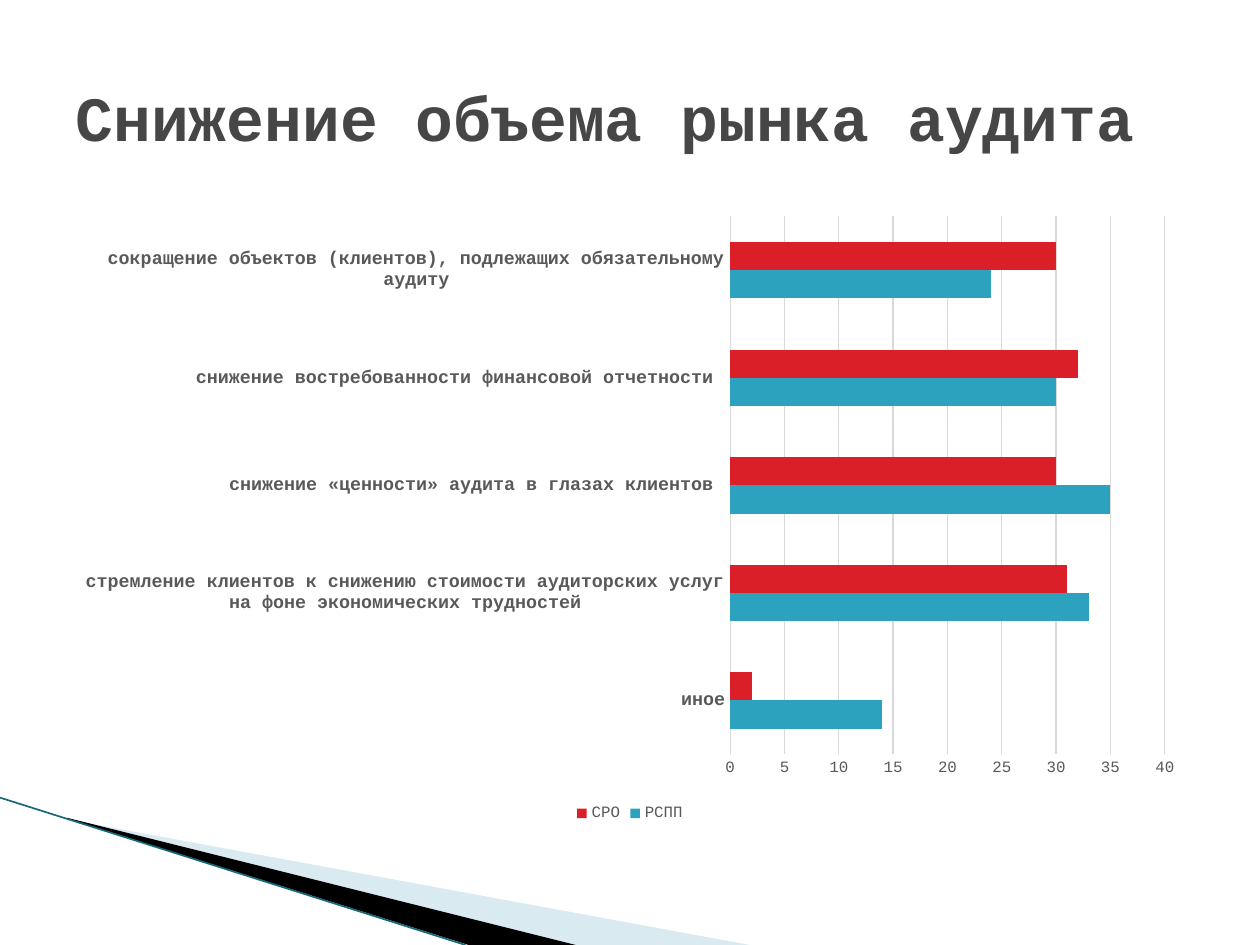
from lxml import etree
from pptx import Presentation
from pptx.chart.data import CategoryChartData
from pptx.dml.color import RGBColor
from pptx.enum import chart as ch, shapes, text
from pptx.oxml import ns
from pptx.util import Pt

COLORS = {"title": "464646", "label": "595959", "grid": "D9D9D9",
          "pale": "A0CBDC", "black": "000000", "edge": "16697A",
          "РСПП": "2DA2BF", "СРО": "DA1F28"}
FONT = "Courier New"


def rgb(name):
    return RGBColor.from_string(COLORS[name])


def set_font(font, size, color, bold=False):
    font.name, font.size, font.bold = FONT, Pt(size), bold
    font.color.rgb = rgb(color)


prs = Presentation()
prs.slide_width, prs.slide_height = Pt(720), Pt(540)
s = prs.slides.add_slide(prs.slide_layouts[5])

# Corner wedges
wedges = [
    ("pale", [(39.6, 468.5), (428.4, 540), (328.3, 540), (39.6, 468)]),
    ("black", [(38.2, 467.3), (329, 540), (267.8, 540), (38.9, 468)]),
]
for color, points in wedges:
    points = [(Pt(x), Pt(y)) for x, y in points]
    builder = s.shapes.build_freeform(*points[0])
    builder.add_line_segments(points[1:])
    sp = builder.convert_to_shape()
    sp.shadow.inherit = False
    sp.fill.solid()
    sp.fill.fore_color.rgb = rgb(color)
    sp.line.fill.background()
    if color == "pale":
        clr = sp.fill._xPr.find(".//" + ns.qn("a:srgbClr"))
        etree.SubElement(clr, ns.qn("a:alpha"), val="40000")

# Corner edge line
edge = s.shapes.add_connector(shapes.MSO_CONNECTOR.STRAIGHT,
                              Pt(0), Pt(455.8), Pt(266), Pt(540))
edge.line.color.rgb = rgb("edge")
edge.line.width = Pt(0.95)
etree.SubElement(edge._element.spPr, ns.qn("a:effectLst"))

# Title
title = s.shapes.title
title.left, title.top, title.width, title.height = Pt(36), Pt(21.6), Pt(648), Pt(90)
tf = title.text_frame
tf.text = "Снижение объема рынка аудита"
tf.word_wrap = True
tf.auto_size = text.MSO_AUTO_SIZE.NONE
tf.vertical_anchor = text.MSO_ANCHOR.MIDDLE
p = tf.paragraphs[0]
p.alignment = text.PP_ALIGN.LEFT
set_font(p.runs[0].font, 36, "title", True)

# Chart
data = CategoryChartData()
data.categories = [
    "иное",
    "стремление клиентов к снижению стоимости аудиторских услуг "
    "на фоне экономических трудностей",
    "снижение «ценности» аудита в глазах клиентов ",
    "снижение востребованности финансовой отчетности ",
    "сокращение объектов (клиентов), подлежащих обязательному аудиту",
]
data.add_series("РСПП", [14, 33, 35, 30, 24])
data.add_series("СРО", [2, 31, 30, 32, 30])
chart = s.shapes.add_chart(ch.XL_CHART_TYPE.BAR_CLUSTERED, Pt(36), Pt(116.6),
                           Pt(648), Pt(356.4), data).chart
chart.has_title = False
set_font(chart.font, 10, "black")

plot = chart.plots[0]
plot.gap_width, plot.overlap = 182, 0
plot.vary_by_categories = False
for series in plot.series:
    series.format.fill.solid()
    series.format.fill.fore_color.rgb = rgb(series.name)

# Axes and legend
cat, val = chart.category_axis, chart.value_axis
for axis in (cat, val):
    axis.major_tick_mark = axis.minor_tick_mark = ch.XL_TICK_MARK.NONE
set_font(cat.tick_labels.font, 10.5, "label", True)
set_font(val.tick_labels.font, 9, "label")
val.minimum_scale, val.maximum_scale, val.major_unit = 0, 40, 5
val.has_major_gridlines = True
val.format.line.fill.background()
for line in (cat.format.line, val.major_gridlines.format.line):
    line.color.rgb = rgb("grid")
    line.width = Pt(0.75)

chart.has_legend = True
chart.legend.position = ch.XL_LEGEND_POSITION.BOTTOM
chart.legend.include_in_layout = False
set_font(chart.legend.font, 9, "label")

prs.save("out.pptx")
